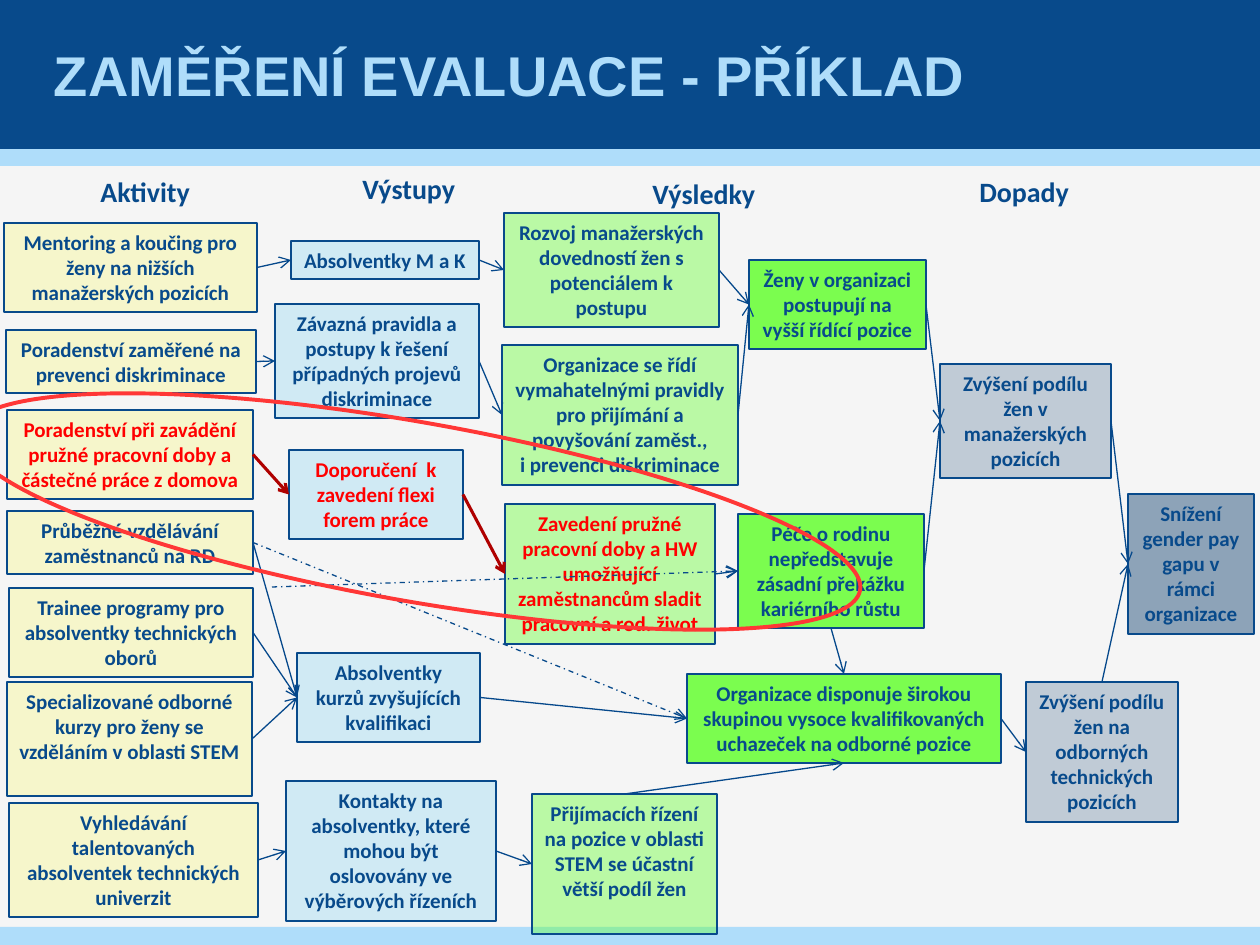
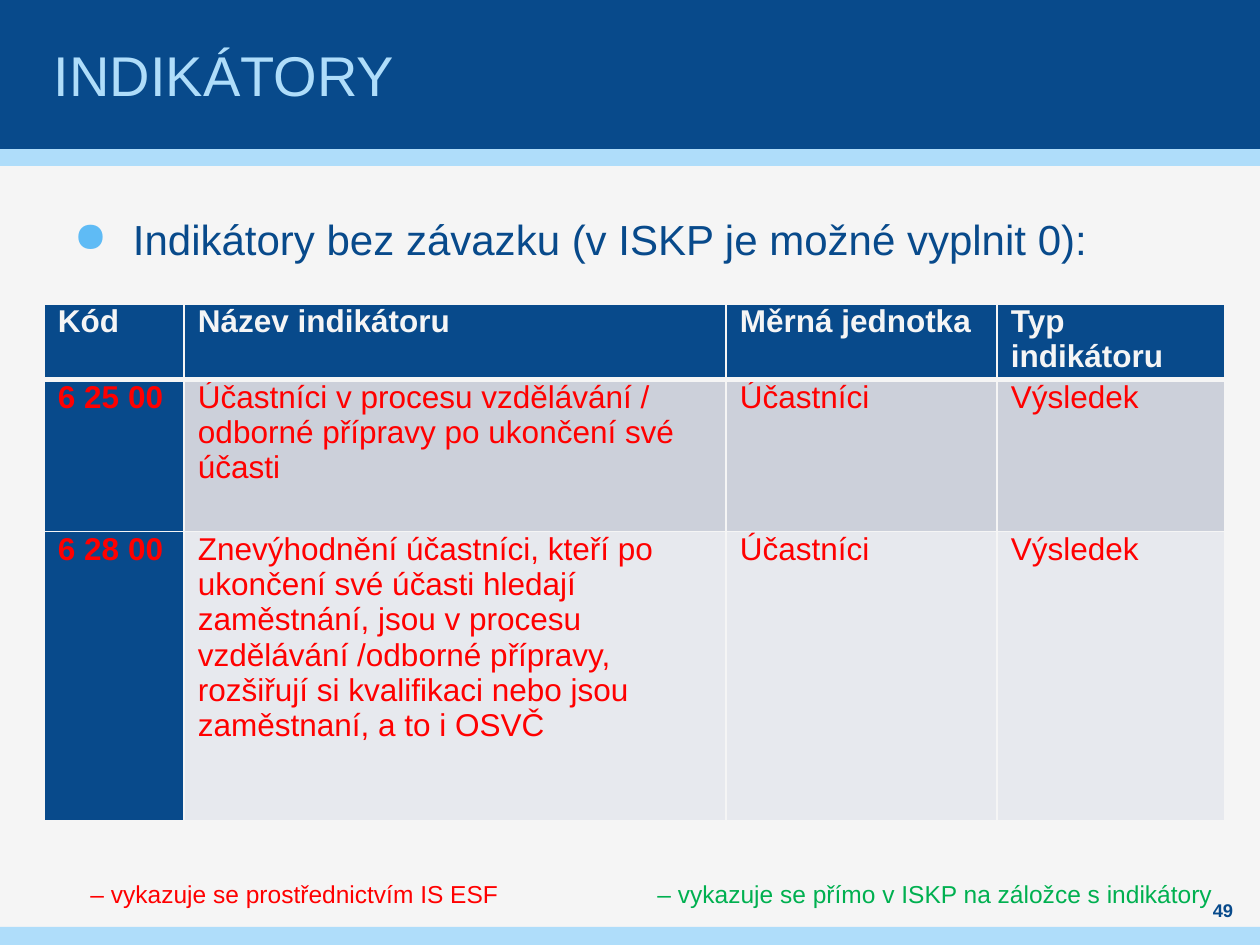
"""Build two slides on evaluation focus and indicators."""
from lxml import etree
from pptx import Presentation
from pptx.dml.color import RGBColor
from pptx.enum.dml import MSO_LINE
from pptx.enum.shapes import MSO_CONNECTOR, MSO_SHAPE
from pptx.enum.text import MSO_ANCHOR, MSO_AUTO_SIZE, PP_ALIGN
from pptx.oxml.ns import qn
from pptx.util import Emu, Pt

RECT, OVAL = MSO_SHAPE.RECTANGLE, MSO_SHAPE.OVAL
STRAIGHT = MSO_CONNECTOR.STRAIGHT
DASH_DOT = MSO_LINE.DASH_DOT
CENTER = PP_ALIGN.CENTER
TOP_ANCHOR, MIDDLE = MSO_ANCHOR.TOP, MSO_ANCHOR.MIDDLE
GROW = MSO_AUTO_SIZE.SHAPE_TO_FIT_TEXT
TOP, LEFT, BOTTOM, RIGHT = range(4)
EMU_PER_PX = 914400 / 126

COLORS = {
    "paper": "F5F5F5", "navy": "084A8B", "sky": "AFDDFA", "bullet": "5FBBF5",
    "link": "05488B", "key_link": "AF0100", "focus": "FF3736",
    "red": "FF0000", "green": "00B050", "odd_row": "CCD0DA", "even_row": "E7E9EE",
    "yellow": "FFFF00", "cyan": "00B0F0", "lime": "66FF33", "ink": "063768",
}
BANDS = [(149, 17, "sky"), (0, 149, "navy"), (927, 18, "sky")]

STAGE_FILLS = {
    "activity": ("yellow", 17), "output": ("cyan", 15), "result": ("lime", 41),
    "outcome": ("lime", 85), "impact": ("ink", 22), "goal": ("ink", 43),
}
STAGE_HEADINGS = [
    ("Aktivity", 88, 168, 116), ("Výstupy", 350, 165, 120),
    ("Výsledky", 640, 170, 130), ("Dopady", 967, 168, 116),
]
STEPS = {
    "mentoring": ("activity", (4, 223, 253, 89),
                  "Mentoring a koučing pro ženy na nižších manažerských pozicích"),
    "prevention": ("activity", (6, 330, 250, 63),
                   "Poradenství zaměřené na prevenci diskriminace"),
    "flexi_advice": ("activity", (7, 410, 246, 89),
                     "Poradenství při zavádění pružné pracovní doby a částečné práce z domova"),
    "parental_training": ("activity", (7, 511, 246, 63),
                          "Průběžné vzdělávání zaměstnanců na RD"),
    "trainee": ("activity", (9, 588, 244, 89),
                "Trainee programy pro absolventky technických oborů"),
    "stem_courses": ("activity", (7, 682, 245, 114),
                     "Specializované odborné kurzy pro ženy se vzděláním v oblasti STEM"),
    "talent_search": ("activity", (9, 803, 249, 114),
                      "Vyhledávání talentovaných absolventek technických univerzit"),
    "mentored": ("output", (291, 241, 188, 38), "Absolventky M a K"),
    "rules": ("output", (275, 304, 204, 114),
              "Závazná pravidla a postupy k řešení případných projevů diskriminace"),
    "flexi_plan": ("output", (289, 450, 174, 89),
                   "Doporučení  k zavedení flexi forem práce"),
    "graduates": ("output", (297, 653, 183, 89),
                  "Absolventky kurzů zvyšujících kvalifikaci"),
    "contacts": ("output", (286, 781, 210, 140),
                 "Kontakty na absolventky, které mohou být oslovovány ve výběrových řízeních"),
    "skills": ("result", (504, 213, 215, 114),
               "Rozvoj manažerských dovedností žen s potenciálem k postupu"),
    "governance": ("result", (502, 345, 236, 140),
                   "Organizace se řídí vymahatelnými pravidly pro přijímání a povyšování "
                   "zaměst.,\ni prevenci diskriminace"),
    "flexi_work": ("result", (505, 504, 210, 140),
                   "Zavedení pružné pracovní doby a HW umožňující zaměstnancům sladit "
                   "pracovní a rod. život"),
    "recruitment": ("result", (532, 794, 185, 140),
                    "Přijímacích řízení na pozice v oblasti STEM se účastní větší podíl žen"),
    "promotion": ("outcome", (749, 260, 177, 89),
                  "Ženy v organizaci postupují na vyšší řídící pozice"),
    "family_care": ("outcome", (738, 514, 186, 114),
                    "Péče o rodinu nepředstavuje zásadní překážku kariérního růstu"),
    "candidates": ("outcome", (687, 674, 314, 89),
                   "Organizace disponuje širokou skupinou vysoce kvalifikovaných "
                   "uchazeček na odborné pozice"),
    "managers": ("impact", (940, 364, 171, 114),
                 "Zvýšení podílu žen v manažerských pozicích"),
    "specialists": ("impact", (1026, 682, 152, 140),
                    "Zvýšení podílu žen na odborných technických pozicích"),
    "pay_gap": ("goal", (1128, 494, 126, 140),
                "Snížení gender pay gapu v rámci organizace"),
}
KEY_STEPS = ["flexi_advice", "flexi_plan", "flexi_work"]
SIDEWAYS_LINKS = [
    ("talent_search", "contacts"), ("contacts", "recruitment"),
    ("skills", "promotion"), ("flexi_work", "family_care"),
    ("promotion", "managers"), ("family_care", "managers"),
    ("managers", "pay_gap"), ("stem_courses", "graduates"),
    ("trainee", "graduates"), ("parental_training", "graduates"),
    ("prevention", "rules"), ("mentoring", "mentored"), ("mentored", "skills"),
    ("candidates", "specialists"), ("rules", "governance"),
    ("governance", "promotion"), ("graduates", "candidates"),
]
VERTICAL_LINKS = [
    ("specialists", TOP, "pay_gap", LEFT),
    ("family_care", BOTTOM, "candidates", TOP),
    ("recruitment", TOP, "candidates", BOTTOM),
]
TRAINEE_LINK_START = (272, 587)
FOCUS_AREA = (324, 58, 179, 907)
FOCUS_ROTATION = 280

INDICATOR_COLUMNS = [("Kód", 140), ("Název indikátoru", 542),
                     ("Měrná jednotka", 271), ("Typ indikátoru", 228)]
INDICATORS = [
    ("6 25 00", "Účastníci v\u00a0procesu vzdělávání / odborné přípravy po ukončení své účasti",
     "Účastníci", "Výsledek"),
    ("6 28 00", "Znevýhodnění účastníci, kteří po ukončení své účasti hledají zaměstnání, "
     "jsou v\u00a0procesu vzdělávání /odborné přípravy, rozšiřují si kvalifikaci nebo jsou "
     "zaměstnaní, a to i OSVČ", "Účastníci", "Výsledek"),
]
INDICATOR_ROW_HEIGHTS = [62, 152, 289]
REPORTING_NOTES = [
    ("– vykazuje se prostřednictvím IS ESF", (73, 873, 446, 43), "red"),
    ("– vykazuje se přímo v ISKP na záložce s indikátory", (640, 873, 593, 43), "green"),
]


def px(value):
    return Emu(round(value * EMU_PER_PX))


def rgb(name):
    return RGBColor.from_string(COLORS[name])


def write(frame, text, size, color, font="Arial", bold=False, align=None):
    paragraph = frame.paragraphs[0]
    paragraph.alignment = align
    for index, line in enumerate(text.split("\n")):
        if index:
            paragraph.add_line_break()
        run = paragraph.add_run()
        run.text = line
        run.font.name, run.font.size, run.font.bold = font, Pt(size), bold
        run.font.color.rgb = rgb(color)
    return paragraph


def indent(paragraph, margin, first=0):
    properties = paragraph._p.get_or_add_pPr()
    properties.set("marL", str(px(margin)))
    properties.set("indent", str(px(first)))
    return properties


def add_text(slide, box, text, size, color, wrap=True, inset=None,
             anchor=TOP_ANCHOR, **style):
    frame = slide.shapes.add_textbox(*map(px, box)).text_frame
    frame.word_wrap = wrap
    frame.vertical_anchor = anchor
    if not wrap:
        frame.auto_size = GROW
    if inset is not None:
        frame.margin_left = frame.margin_right = px(inset)
        frame.margin_top = frame.margin_bottom = 0
    return write(frame, text, size, color, **style)


def add_filled(slide, box, fill, alpha=100):
    shape = slide.shapes.add_shape(RECT, *map(px, box))
    shape.shadow.inherit = False
    shape.fill.solid()
    shape.fill.fore_color.rgb = rgb(fill)
    if alpha < 100:
        tint = shape.fill._xPr.find(qn("a:solidFill"))[0]
        etree.SubElement(tint, qn("a:alpha"), val=str(alpha * 1000))
    shape.line.fill.background()
    return shape


def start_slide(deck, title, bold):
    slide = deck.slides.add_slide(deck.slide_layouts[6])
    slide.background.fill.solid()
    slide.background.fill.fore_color.rgb = rgb("paper")
    for top, height, color in BANDS:
        add_filled(slide, (0, top, 1260, height), color)
    add_text(slide, (49, 0, 1160, 149), title, 32, "sky", inset=5,
             anchor=MIDDLE, bold=bold)
    return slide


def add_step(slide, key):
    stage, box, text = STEPS[key]
    shape = add_filled(slide, box, *STAGE_FILLS[stage])
    shape.line.color.rgb = rgb("navy")
    shape.line.width = Pt(1)
    frame = shape.text_frame
    frame.word_wrap, frame.auto_size = True, GROW
    frame.vertical_anchor = TOP_ANCHOR
    write(frame, text, 12, "red" if key in KEY_STEPS else "navy",
          font="Calibri", bold=True, align=CENTER)
    return shape


def add_link(slide, target, target_side=LEFT, source=None, source_side=RIGHT,
             start=(0, 0), color="link", width=0.75, dash=None):
    x, y = map(px, start)
    link = slide.shapes.add_connector(STRAIGHT, x, y, x, y)
    if source is not None:
        link.begin_connect(source, source_side)
    link.end_connect(target, target_side)
    link.line.color.rgb = rgb(color)
    link.line.width = Pt(width)
    if dash:
        link.line.dash_style = dash
    etree.SubElement(link.line._get_or_add_ln(), qn("a:tailEnd"), type="arrow")
    etree.SubElement(link._element.spPr, qn("a:effectLst"))


def build_example(deck):
    slide = start_slide(deck, "ZAMĚŘENÍ EVALUACE - PŘÍKLAD", True)
    for heading, left, top, width in STAGE_HEADINGS:
        add_text(slide, (left, top, width, 47), heading, 16, "navy",
                 wrap=False, font="Calibri", bold=True)
    steps = {key: add_step(slide, key) for key in STEPS}
    for source, target in SIDEWAYS_LINKS:
        add_link(slide, steps[target], source=steps[source])
    for source, source_side, target, target_side in VERTICAL_LINKS:
        add_link(slide, steps[target], target_side, steps[source], source_side)
    for source, target in zip(KEY_STEPS, KEY_STEPS[1:]):
        add_link(slide, steps[target], source=steps[source],
                 color="key_link", width=1.75)
    add_link(slide, steps["family_care"], start=TRAINEE_LINK_START,
             color="navy", dash=DASH_DOT)
    add_link(slide, steps["candidates"], source=steps["parental_training"],
             color="navy", dash=DASH_DOT)
    focus = slide.shapes.add_shape(OVAL, *map(px, FOCUS_AREA))
    focus.shadow.inherit = False
    focus.rotation = FOCUS_ROTATION
    focus.fill.background()
    focus.line.color.rgb = rgb("focus")
    focus.line.width = Pt(2.25)


def set_borders(cell, widths):
    properties = cell._tc.get_or_add_tcPr()
    for side, width in widths.items():
        border = etree.SubElement(properties, qn(f"a:ln{side}"), w=str(Pt(width)))
        fill = etree.SubElement(border, qn("a:solidFill"))
        etree.SubElement(fill, qn("a:srgbClr"), val=COLORS["paper"])


def add_indicator_table(slide):
    headings, widths = zip(*INDICATOR_COLUMNS)
    rows = [headings, *INDICATORS]
    table = slide.shapes.add_table(
        len(rows), len(widths), px(44), px(304), px(sum(widths)),
        px(sum(INDICATOR_ROW_HEIGHTS))).table
    for column, width in zip(table.columns, widths):
        column.width = px(width)
    for r, texts in enumerate(rows):
        table.rows[r].height = px(INDICATOR_ROW_HEIGHTS[r])
        for c, text in enumerate(texts):
            cell = table.cell(r, c)
            is_label = r == 0 or c == 0
            set_borders(cell, {"L": 1, "R": 1, "T": 3 if r == 1 else 1,
                               "B": 3 if r == 0 else 1})
            cell.fill.solid()
            cell.fill.fore_color.rgb = rgb(
                "navy" if is_label else "odd_row" if r % 2 else "even_row")
            cell.margin_left = cell.margin_right = px(9)
            cell.margin_top = cell.margin_bottom = 0
            paragraph = write(cell.text_frame, text, 18,
                              "red" if r else "paper", bold=is_label)
            indent(paragraph, 5)
            paragraph.space_after = Pt(3)


def build_indicators(deck):
    slide = start_slide(deck, "INDIKÁTORY", False)
    intro = add_text(slide, (74, 214, 1111, 595),
                     "Indikátory bez závazku (v ISKP je možné vyplnit 0):",
                     24, "navy", inset=0)
    properties = indent(intro, 59, -59)
    bullet_color = etree.SubElement(properties, qn("a:buClr"))
    etree.SubElement(bullet_color, qn("a:srgbClr"), val=COLORS["bullet"])
    etree.SubElement(properties, qn("a:buChar"), char="●")
    intro.line_spacing = Pt(28.8)
    intro.space_after = Pt(6)
    add_text(slide, (1191, 898, 64, 25), "49", 10.5, "navy", inset=0,
             anchor=MIDDLE, bold=True, align=CENTER)
    add_indicator_table(slide)
    for text, box, color in REPORTING_NOTES:
        note = add_text(slide, box, text, 14, color, wrap=False)
        indent(note, 5)


def main():
    deck = Presentation()
    deck.slide_width, deck.slide_height = px(1260), px(945)
    build_example(deck)
    build_indicators(deck)
    deck.save("out.pptx")


if __name__ == "__main__":
    main()
